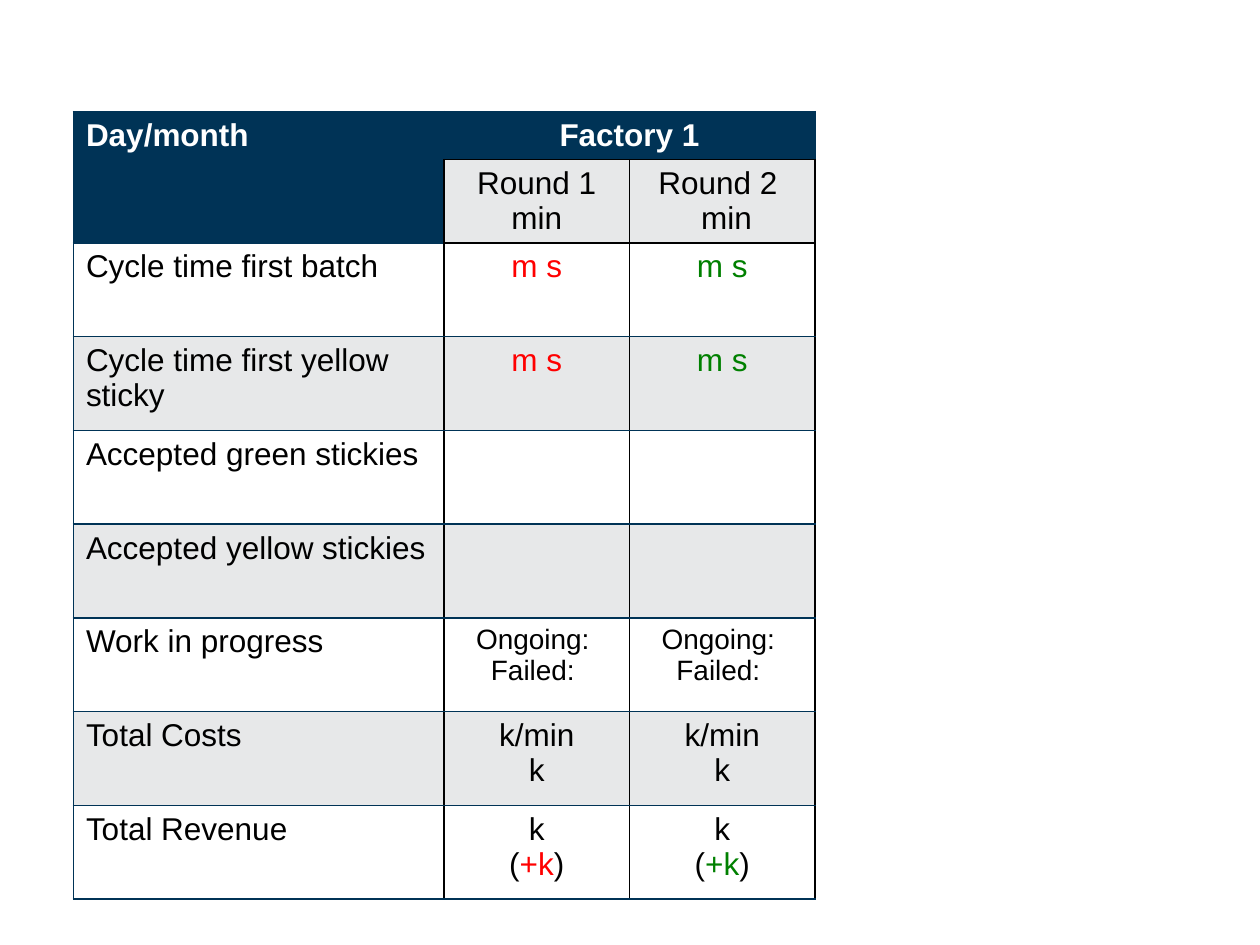
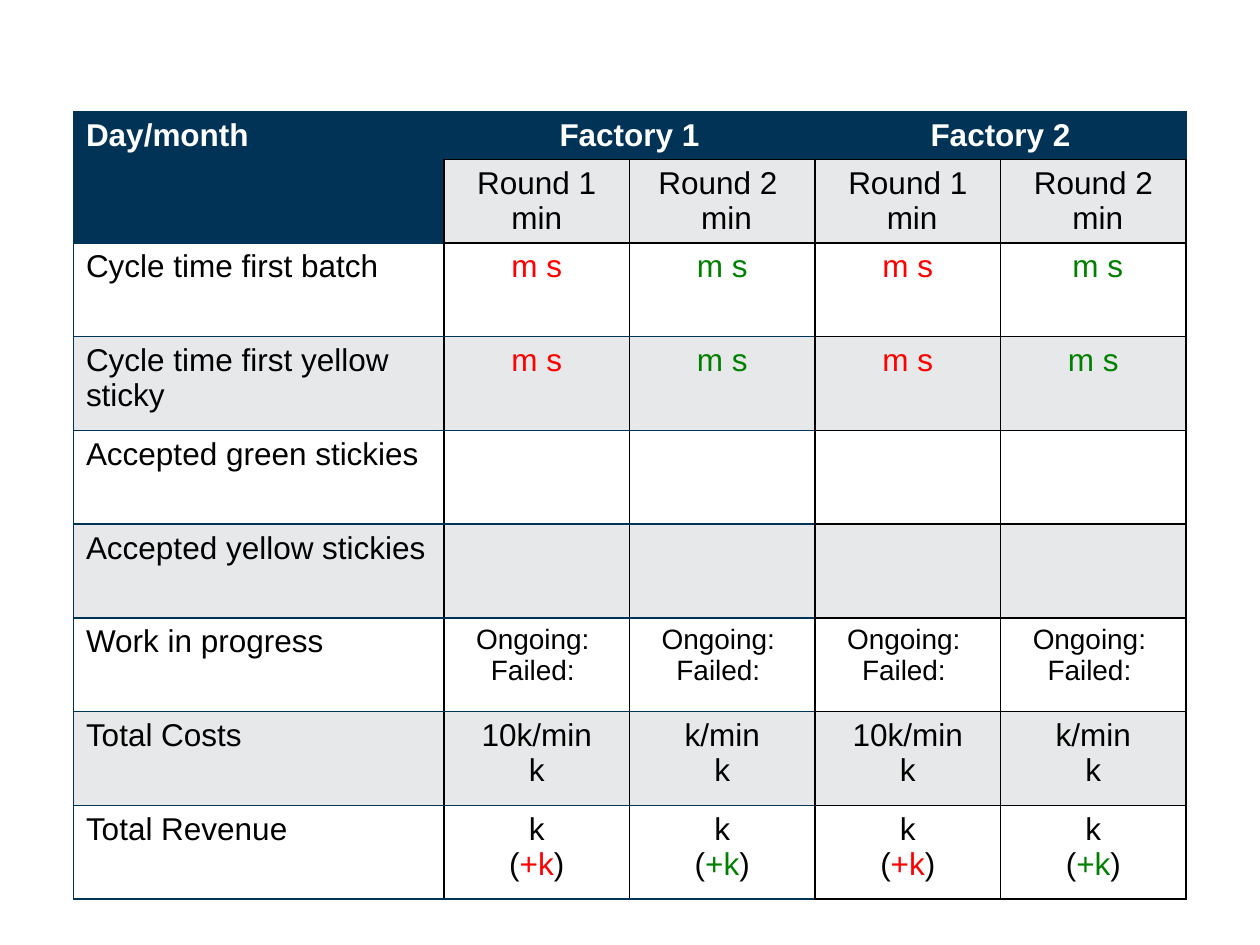
from lxml.etree import SubElement
from pptx import Presentation
from pptx.dml.color import RGBColor
from pptx.enum.text import PP_ALIGN
from pptx.oxml.ns import qn
from pptx.util import Cm, Pt

NAVY = RGBColor(0x00, 0x33, 0x56)
GREY = RGBColor(0xE7, 0xE8, 0xE9)
WHITE = RGBColor(0xFF, 0xFF, 0xFF)
BLACK = RGBColor(0x00, 0x00, 0x00)
RED = RGBColor(0xFF, 0x00, 0x00)
GREEN = RGBColor(0x00, 0x80, 0x00)

FONT = "Arial"
LEFT, TOP = Cm(1.48), Cm(2.25)
LABEL_WIDTH, ROUND_WIDTH = Cm(7.47), Cm(3.74)
HEADER_HEIGHT, ROUND_HEIGHT, MEASURE_HEIGHT = Cm(0.97), Cm(1.67), Cm(1.89)
HEADER_ROWS = 2
ROUNDS_PER_FACTORY = 2

MEASURES = [
    "Cycle time first batch",
    "Cycle time first yellow sticky",
    "Accepted green stickies",
    "Accepted yellow stickies",
    "Work in progress",
    "Total Costs",
    "Total Revenue",
]


def round_values(cost="k/min", batch_time="*m s*"):
    """Values of one round, in the order of MEASURES."""
    return [batch_time, "*m s*", "", "", "Ongoing: \nFailed: ",
            f"{cost}\nk", "k\n(*+k*)"]


def write_cell(cell, text, color=BLACK, accent=BLACK, size=18, bold=False,
               align=PP_ALIGN.CENTER):
    """Write lines of text; parts between asterisks take the accent colour."""
    tf = cell.text_frame
    for i, line in enumerate(text.split("\n")):
        p = tf.add_paragraph() if i else tf.paragraphs[0]
        p.alignment = align
        p.font.size = Pt(size)
        for j, part in enumerate(line.split("*")):
            if not part:
                continue
            r = p.add_run()
            r.text = part
            r.font.name = FONT
            r.font.size = Pt(size)
            r.font.bold = bold
            r.font.color.rgb = accent if j % 2 else color


def style_cell(cell, fill, left, right, top, bottom):
    """Set the fill and the colour of each 1 pt border."""
    tc_pr = cell._tc.get_or_add_tcPr()
    for side, color in zip("LRTB", (left, right, top, bottom)):
        ln = SubElement(tc_pr, qn(f"a:ln{side}"), w=str(Pt(1)))
        solid = SubElement(ln, qn("a:solidFill"))
        SubElement(solid, qn("a:srgbClr"), val=str(color))
    cell.fill.solid()
    cell.fill.fore_color.rgb = fill


def style_grid(table):
    """Navy heading, grey and white rows, navy rules up to the first factory."""
    for row in range(len(table.rows)):
        for col in range(len(table.columns)):
            cell = table.cell(row, col)
            if row == 0 or (row < HEADER_ROWS and col == 0):
                bottom = BLACK if col else NAVY
                style_cell(cell, NAVY, NAVY, NAVY, NAVY, bottom)
                continue
            rule = NAVY if row >= HEADER_ROWS and col <= ROUNDS_PER_FACTORY else BLACK
            top = BLACK if row == HEADER_ROWS and col else rule
            style_cell(cell, GREY if row % 2 else WHITE,
                       BLACK if col else NAVY, BLACK, top, rule)


def add_scoreboard(prs, rounds):
    """Add a slide whose table has one column per (heading, values) round."""
    slide = prs.slides.add_slide(prs.slide_layouts[6])
    widths = [LABEL_WIDTH] + [ROUND_WIDTH] * len(rounds)
    heights = [HEADER_HEIGHT, ROUND_HEIGHT] + [MEASURE_HEIGHT] * len(MEASURES)
    table = slide.shapes.add_table(len(heights), len(widths), LEFT, TOP,
                                   sum(widths), sum(heights)).table
    table.first_row = table.horz_banding = False
    for column, width in zip(table.columns, widths):
        column.width = width
    for row, height in zip(table.rows, heights):
        row.height = height
    style_grid(table)

    table.cell(0, 0).merge(table.cell(1, 0))
    write_cell(table.cell(0, 0), "Day/month", WHITE, bold=True, align=PP_ALIGN.LEFT)
    for row, measure in enumerate(MEASURES, HEADER_ROWS):
        write_cell(table.cell(row, 0), measure, align=PP_ALIGN.LEFT)

    for col, (heading, values) in enumerate(rounds, 1):
        factory, second_round = divmod(col - 1, ROUNDS_PER_FACTORY)
        if not second_round:
            table.cell(0, col).merge(table.cell(0, col + ROUNDS_PER_FACTORY - 1))
            write_cell(table.cell(0, col), f"Factory {factory + 1}", WHITE, bold=True)
        write_cell(table.cell(1, col), heading)
        for row, value in enumerate(values, HEADER_ROWS):
            write_cell(table.cell(row, col), value,
                       accent=GREEN if second_round else RED,
                       size=16 if MEASURES[row - HEADER_ROWS] == "Work in progress" else 18)


def main():
    prs = Presentation()
    prs.slide_width, prs.slide_height = Cm(25.4), Cm(19.05)
    add_scoreboard(prs, [
        ("Round 1 min", round_values()),
        ("Round 2 \n min", round_values()),
    ])
    add_scoreboard(prs, [
        ("Round 1 min", round_values("10k/min")),
        ("Round 2 \n min", round_values()),
        ("Round 1\n min", round_values("10k/min")),
        ("Round 2\n min", round_values(batch_time=" *m s*")),
    ])
    prs.save("out.pptx")


if __name__ == "__main__":
    main()
